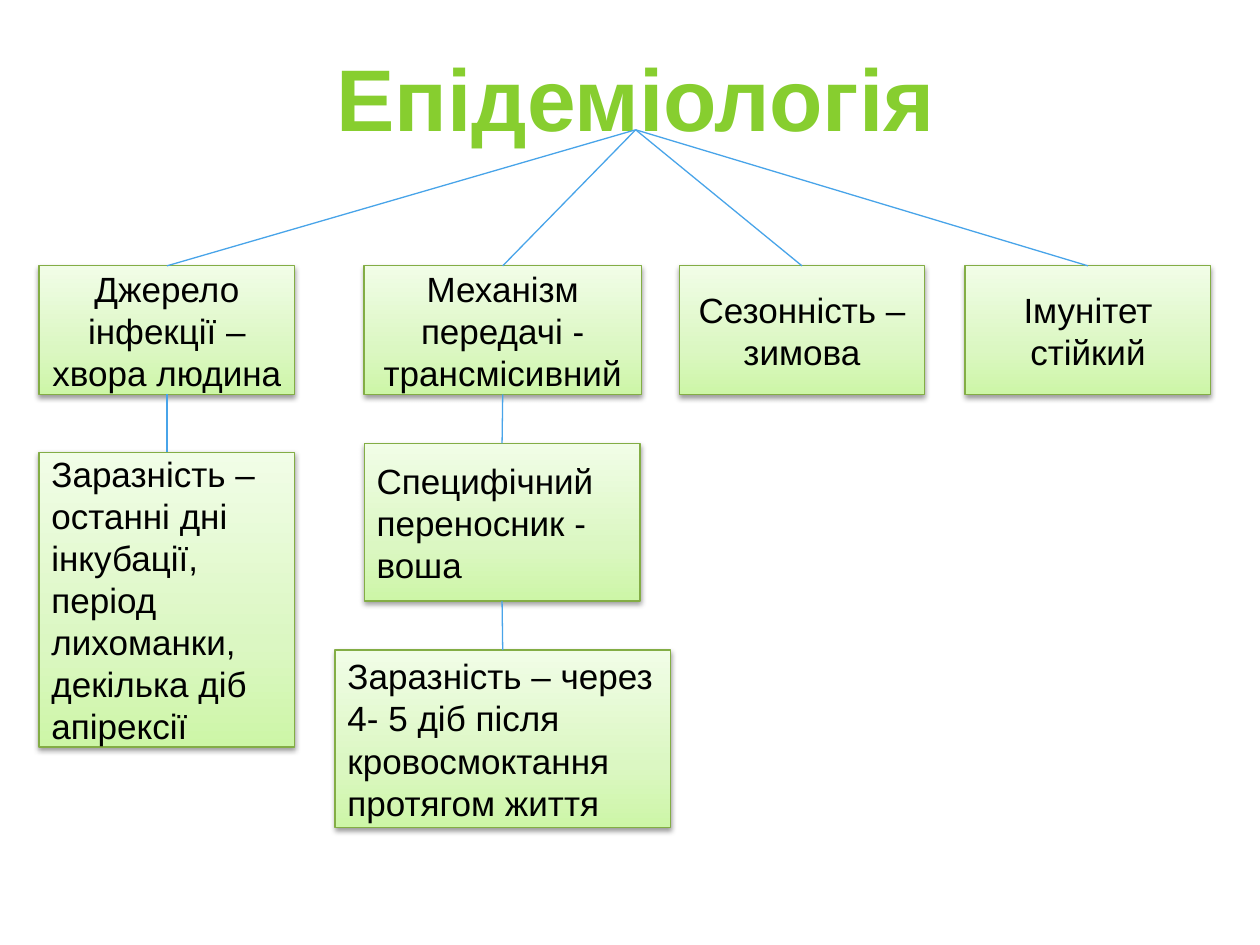
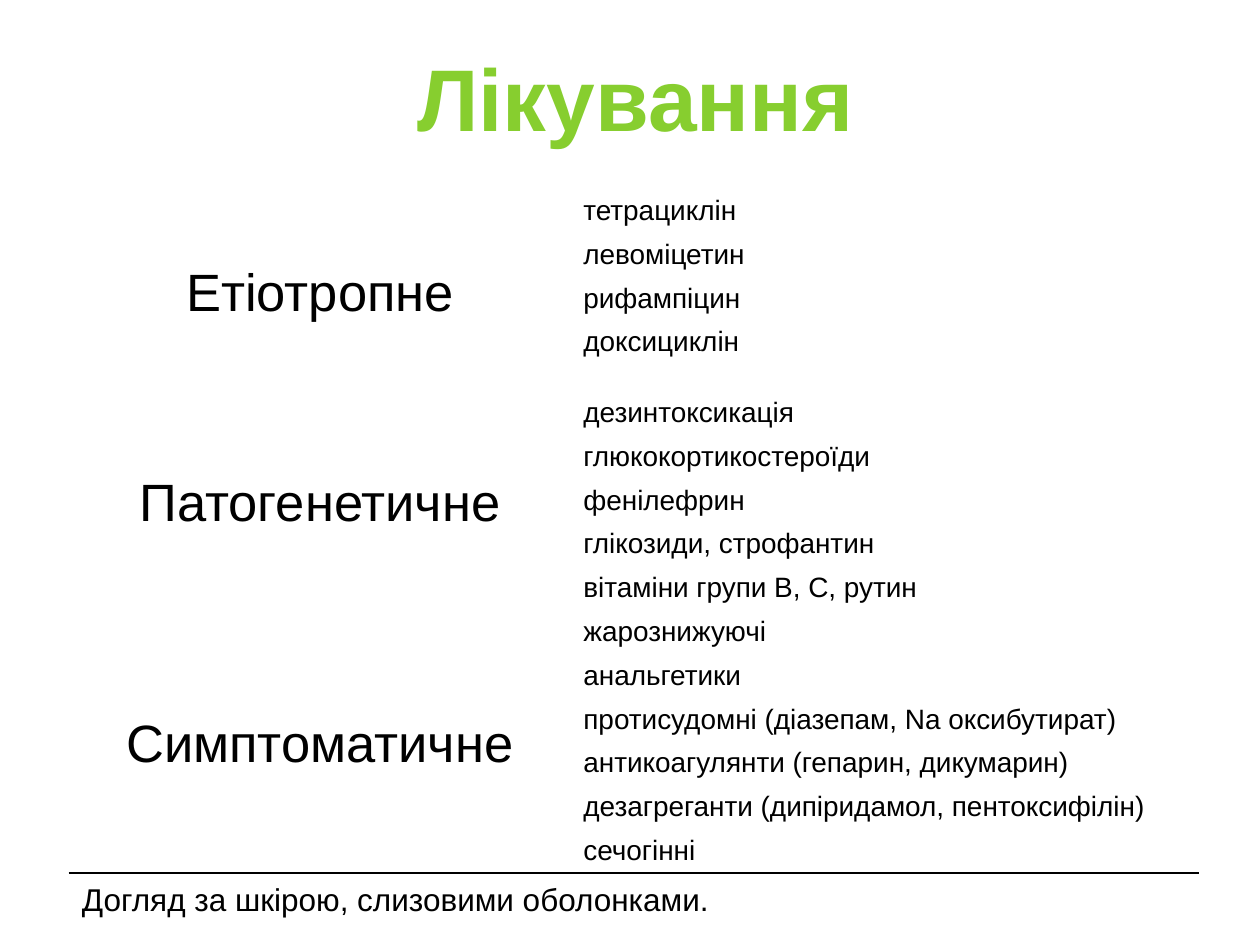
"""Build two slides on epidemiology and treatment."""
from dataclasses import dataclass

from lxml import etree
from pptx import Presentation
from pptx.dml.color import RGBColor
from pptx.enum.shapes import MSO_CONNECTOR, MSO_SHAPE
from pptx.enum.text import MSO_ANCHOR, PP_ALIGN
from pptx.oxml.ns import qn
from pptx.util import Inches, Pt

RECTANGLE = MSO_SHAPE.RECTANGLE
STRAIGHT = MSO_CONNECTOR.STRAIGHT
LEFT, CENTER = PP_ALIGN.LEFT, PP_ALIGN.CENTER
TOP_ANCHOR, MIDDLE = MSO_ANCHOR.TOP, MSO_ANCHOR.MIDDLE
TOP_SIDE, BOTTOM_SIDE = 0, 2


@dataclass(frozen=True)
class Theme:
    """Colours, fonts and type sizes."""
    font: str = "Arial"
    text: str = "000000"
    box_line: str = "83AD45"
    connector: str = "48A4E9"
    title_stops: tuple = ((0, "BDFB7C"), (75, "87CE2F"), (100, "77C704"))
    box_stops: tuple = ((0, "CDF6A7"), (35, "DBF7C2"), (100, "F1FDE7"))
    title_size: int = 50
    group_size: int = 30
    box_size: int = 20
    note_size: int = 18
    item_size: int = 16


def add_element(parent, tag, **attributes):
    """Append a DrawingML element with the given attributes."""
    values = {name: str(value) for name, value in attributes.items()}
    return etree.SubElement(parent, qn(tag), values)


def set_gradient(fill, properties, stops, angle):
    """Give a fill its gradient stops and angle."""
    fill.gradient()
    fill.gradient_angle = angle
    stop_list = properties.find(qn("a:gradFill")).find(qn("a:gsLst"))
    for stop in list(stop_list):
        stop_list.remove(stop)
    for position, color in stops:
        stop = add_element(stop_list, "a:gs", pos=position * 1000)
        add_element(stop, "a:srgbClr", val=color)


class SlideBuilder:
    """Holds the theme and the slide being built."""

    def __init__(self, presentation, theme):
        """Keep the presentation and its theme."""
        self.presentation = presentation
        self.theme = theme
        self.slide = None

    def start_slide(self, title):
        """Add a blank slide and return its title shape."""
        self.slide = self.presentation.slides.add_slide(self.presentation.slide_layouts[6])
        shape = self.slide.shapes.add_textbox(
            Inches(1.17), Inches(0.5), Inches(7.75), Inches(0.53))
        self.set_text(shape.text_frame, title, self.theme.title_size, CENTER)
        run = shape.text_frame.paragraphs[0].runs[0]
        run.font.bold = True
        set_gradient(run.font.fill, run.font._element, self.theme.title_stops, 270)
        return shape

    def set_text(self, text_frame, text, size, alignment):
        """Fill a text frame with one formatted paragraph."""
        text_frame.text = text
        text_frame.word_wrap = True
        text_frame.vertical_anchor = MIDDLE
        paragraph = text_frame.paragraphs[0]
        paragraph.alignment = alignment
        for run in paragraph.runs:
            run.font.name = self.theme.font
            run.font.size = Pt(size)
            run.font.color.rgb = RGBColor.from_string(self.theme.text)

    def add_box(self, text, left, top, width, height, alignment=LEFT):
        """Add a shaded box with a soft shadow."""
        shape = self.slide.shapes.add_shape(
            RECTANGLE, Inches(left), Inches(top), Inches(width), Inches(height))
        properties = shape._element.spPr
        set_gradient(shape.fill, properties, self.theme.box_stops, 90)
        shape.line.color.rgb = RGBColor.from_string(self.theme.box_line)
        shape.line.width = Pt(0.75)
        shape.shadow.inherit = False
        shadow = add_element(properties.find(qn("a:effectLst")), "a:outerShdw",
                             blurRad=Pt(3.1), dist=Pt(1.6), dir=5400000, rotWithShape=0)
        add_element(add_element(shadow, "a:srgbClr", val="000000"), "a:alpha", val=38000)
        self.set_text(shape.text_frame, text, self.theme.box_size, alignment)
        return shape

    def connect(self, upper, lower):
        """Join the bottom of one shape to the top of another."""
        connector = self.slide.shapes.add_connector(STRAIGHT, 0, 0, 0, 0)
        connector.begin_connect(upper, BOTTOM_SIDE)
        connector.end_connect(lower, TOP_SIDE)
        connector.line.color.rgb = RGBColor.from_string(self.theme.connector)
        connector.line.width = Pt(0.75)
        add_element(connector._element.spPr, "a:effectLst")

    def fill_cell(self, cell, text, size, alignment=LEFT, anchor=MIDDLE):
        """Put formatted text in a table cell."""
        self.set_text(cell.text_frame, text, size, alignment)
        cell.vertical_anchor = anchor

    def rule_cell(self, cell, side):
        """Draw a thin rule on one side of a cell."""
        properties = cell._tc.get_or_add_tcPr()
        line = etree.Element(qn(side), w=str(Pt(1)))
        add_element(add_element(line, "a:solidFill"), "a:srgbClr", val=self.theme.text)
        properties.insert(0, line)

    def add_treatment_table(self, groups, note):
        """Add treatment groups beside their items, with a closing note."""
        item_count = sum(len(items) for _, items in groups)
        table = self.slide.shapes.add_table(
            item_count + 1, 2, Inches(0.55), Inches(1.5), Inches(8.96), Inches(5.82)).table
        table.first_row = table.horz_banding = False
        table.columns[0].width, table.columns[1].width = Inches(3.98), Inches(4.98)
        body_height, spaced_height = 5.43, 0.56
        for row in table.rows:
            row.height = Inches((body_height - spaced_height) / (item_count - 1))
        table.rows[len(groups[0][1]) - 1].height = Inches(spaced_height)
        table.rows[item_count].height = Inches(0.39)
        for cell in table.iter_cells():
            cell.fill.background()
            cell.margin_top, cell.margin_bottom = Inches(0.05), 0

        first = 0
        for name, items in groups:
            last = first + len(items) - 1
            group_cell = table.cell(first, 0)
            group_cell.merge(table.cell(last, 0))
            self.fill_cell(group_cell, name, self.theme.group_size, CENTER)
            for row, item in enumerate(items, first):
                self.fill_cell(table.cell(row, 1), item, self.theme.item_size,
                               anchor=TOP_ANCHOR)
            first = last + 1

        note_cell = table.cell(item_count, 0)
        note_cell.merge(table.cell(item_count, 1))
        self.fill_cell(note_cell, note, self.theme.note_size)
        self.rule_cell(group_cell, "a:lnB")
        for column in range(2):
            self.rule_cell(table.cell(item_count - 1, column), "a:lnB")
            self.rule_cell(table.cell(item_count, column), "a:lnT")


def build_epidemiology(builder):
    """Build the epidemiology tree."""
    title = builder.start_slide("Епідеміологія")
    factors = (
        ("Джерело інфекції – хвора людина", 0.31, 2.03),
        ("Механізм передачі - трансмісивний", 2.89, 2.2),
        ("Сезонність – зимова", 5.39, 1.95),
        ("Імунітет стійкий", 7.66, 1.95),
    )
    source, mechanism, season, immunity = [
        builder.add_box(text, left, 2.11, width, 1.02, CENTER)
        for text, left, width in factors]
    source_period = builder.add_box(
        "Заразність – останні дні інкубації, період лихоманки, декілька діб апірексії",
        0.31, 3.59, 2.03, 2.34)
    carrier = builder.add_box("Специфічний переносник - воша", 2.89, 3.52, 2.19, 1.25)
    carrier_period = builder.add_box(
        "Заразність – через 4- 5 діб після кровосмоктання протягом життя",
        2.66, 5.16, 2.66, 1.41)
    for factor in (source, mechanism, season, immunity):
        builder.connect(title, factor)
    for upper, lower in ((source, source_period), (mechanism, carrier),
                         (carrier, carrier_period)):
        builder.connect(upper, lower)


def build_treatment(builder):
    """Build the treatment table."""
    builder.start_slide("Лікування")
    groups = (
        ("Етіотропне", ("тетрациклін", "левоміцетин", "рифампіцин", "доксициклін")),
        ("Патогенетичне", (
            "дезинтоксикація", "глюкокортикостероїди", "фенілефрин",
            "глікозиди, строфантин", "вітаміни групи В, С, рутин")),
        ("Симптоматичне", (
            "жарознижуючі", "анальгетики", "протисудомні (діазепам, Na оксибутират)",
            "антикоагулянти (гепарин, дикумарин)",
            "дезагреганти (дипіридамол, пентоксифілін)", "сечогінні")),
    )
    builder.add_treatment_table(groups, "Догляд за шкірою, слизовими оболонками.")


def main():
    """Create and save the presentation."""
    presentation = Presentation()
    presentation.slide_width, presentation.slide_height = Inches(10), Inches(7.5)
    builder = SlideBuilder(presentation, Theme())
    build_epidemiology(builder)
    build_treatment(builder)
    presentation.save("out.pptx")


if __name__ == "__main__":
    main()
